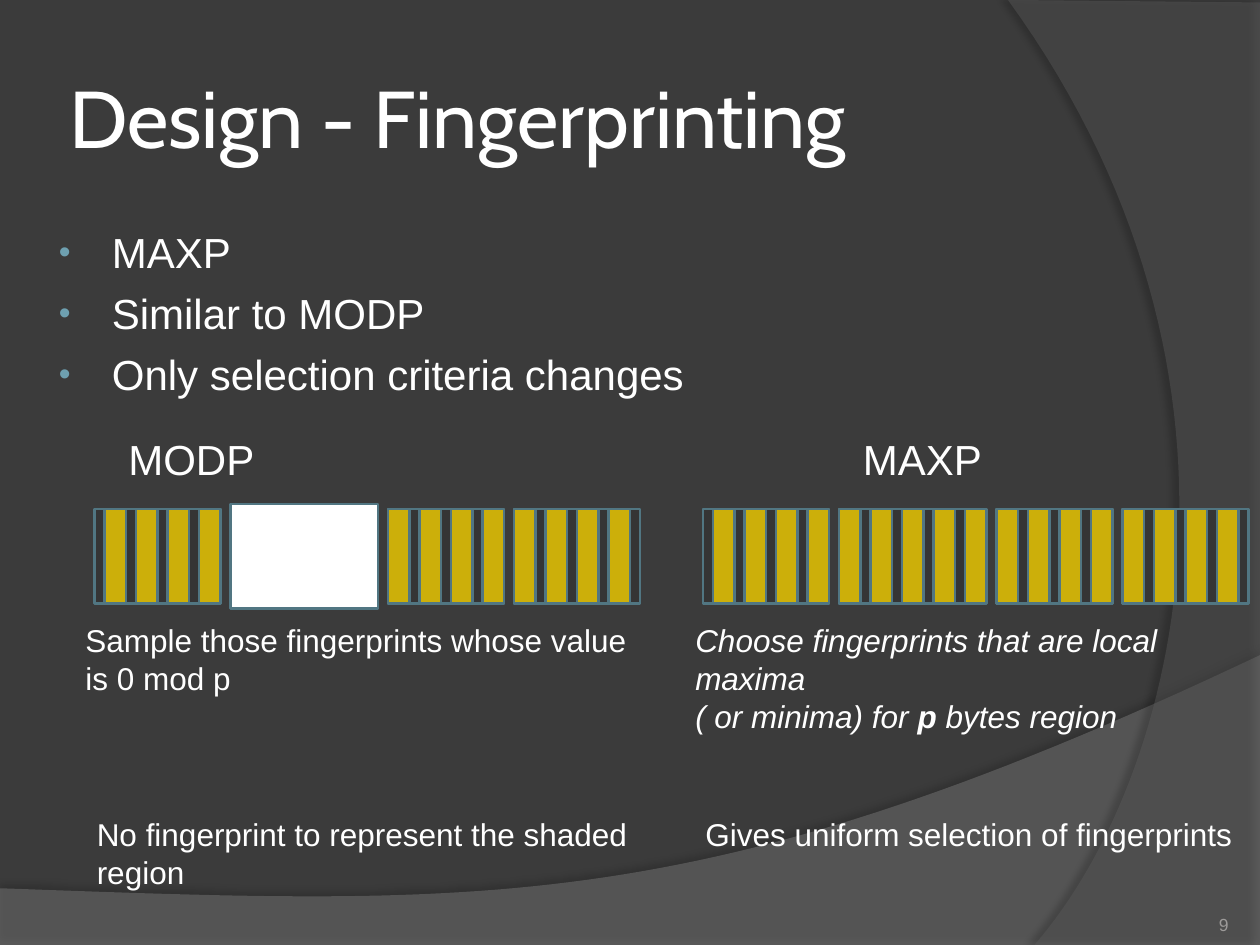
"""Build the fingerprinting design slide comparing MODP and MAXP."""
from lxml.etree import SubElement
from pptx import Presentation
from pptx.dml.color import RGBColor
from pptx.enum.shapes import MSO_SHAPE
from pptx.enum.text import MSO_ANCHOR, PP_ALIGN
from pptx.oxml import parse_xml
from pptx.oxml.ns import nsdecls, qn
from pptx.util import Inches, Pt

COLORS = {"bg": "3B3B3B", "text": "FFFFFF", "bar": "353535", "stripe": "CCAF0A",
          "edge": "517682", "bullet": "6EA0B0", "number": "9D9B9A",
          "wave": "7F7F7F", "arc": "5E5E5E"}
TITLE = "Design - Fingerprinting"
BULLETS = ["MAXP", "Similar to MODP", "Only selection criteria changes"]
LABELS = [("MODP", 0.92, 1.33), ("MAXP", 6.75, 1.42)]
NOTES = [
    (0.58, 4.88, 0.71, [[("Sample those fingerprints whose value is 0 mod p", "")]]),
    (5.42, 4.88, 0.71, [[("Choose fingerprints that are local maxima", "i")],
                        [("( or minima) for ", "i"), ("p", "bi"), (" bytes region", "i")]]),
    (0.67, 6.42, 0.72, [[("No fingerprint to represent the shaded region", "")]]),
    (5.5, 6.42, 0.4, [[("Gives uniform selection of fingerprints", "")]]),
]
STREAMS = [(0.75, {5, 6, 7}), (5.58, set())]
BLOCKS = [(0, 1), (1.08, 1), (2.33, 0.92), (3.33, 1)]
STRIPES, PITCH, STRIPE_W = 17, 0.25, 0.17
BAR_TOP, BAR_H = 4.04, 0.75
WAVES = [
    ("wave", 45, [(0, 7.05), (0, 7.5), (10, 7.5), (10, 5.2)],
     [(5.59, 7.29), (3.91, 7.19), (0, 7.05)], (35, 4, 3.5, 270)),
    ("arc", 40, [(10, 0.02), (10, 7.5), (8.21, 7.5)],
     [(9.35, 6.19), (10.18, 3), (8, 0)], (45, 4, 4, 180)),
]


def rgb(name):
    return RGBColor.from_string(COLORS[name])


def style(r, size, color="text", font="Arial", flags=""):
    r.font.size, r.font.name = Pt(size), font
    r.font.color.rgb = rgb(color)
    r.font.bold, r.font.italic = "b" in flags, "i" in flags


def add_text(s, x, y, w, h, paragraphs, size, color="text"):
    tf = s.shapes.add_textbox(*map(Inches, (x, y, w, h))).text_frame
    tf.word_wrap = True
    for i, runs in enumerate(paragraphs):
        p = tf.paragraphs[0] if i == 0 else tf.add_paragraph()
        for text, flags in runs:
            r = p.add_run()
            r.text = text
            style(r, size, color, flags=flags)
    return tf


def add_rect(s, x, y, w, h, fill):
    sp = s.shapes.add_shape(MSO_SHAPE.RECTANGLE, *map(Inches, (x, y, w, h)))
    sp.shadow.inherit = False
    sp.fill.solid()
    sp.fill.fore_color.rgb = rgb(fill)
    sp.line.color.rgb = rgb("edge")
    sp.line.width = Pt(1.5)


def bezier(p0, p1, p2, p3, steps=60):
    for i in range(1, steps + 1):
        t = i / steps
        yield tuple((1 - t) ** 3 * a + 3 * t * (1 - t) ** 2 * b
                    + 3 * t * t * (1 - t) * c + t ** 3 * d
                    for a, b, c, d in zip(p0, p1, p2, p3))


def add_wave(s, color, alpha, corners, curve, shadow):
    points = [(Inches(x), Inches(y))
              for x, y in corners + list(bezier(corners[-1], *curve))]
    fb = s.shapes.build_freeform(*points[0])
    fb.add_line_segments(points[1:], close=True)
    sp = fb.convert_to_shape()
    sp.fill.solid()
    sp.fill.fore_color.rgb = rgb(color)
    sp.line.fill.background()
    clr = sp.fill._xPr.find(qn("a:solidFill"))[0]
    SubElement(clr, qn("a:alpha"), val=str(alpha * 1000))
    opacity, blur, dist, angle = shadow
    sp._element.spPr.append(parse_xml(
        f'<a:effectLst {nsdecls("a")}><a:outerShdw blurRad="{Pt(blur)}" dist="{Pt(dist)}" '
        f'dir="{angle * 60000}" algn="ctr" rotWithShape="0"><a:srgbClr val="000000">'
        f'<a:alpha val="{opacity * 1000}"/></a:srgbClr></a:outerShdw></a:effectLst>'))


def add_bullet(p):
    pPr = p._p.get_or_add_pPr()
    pPr.set("marL", str(Inches(0.46)))
    pPr.set("indent", str(Inches(-0.42)))
    p.space_before = Pt(6)
    clr = SubElement(pPr, qn("a:buClr"))
    SubElement(clr, qn("a:srgbClr"), val=COLORS["bullet"])
    SubElement(pPr, qn("a:buSzPct"), val="80000")
    SubElement(pPr, qn("a:buFont"), typeface="Arial")
    SubElement(pPr, qn("a:buChar"), char="•")


def add_title(s):
    sp = s.shapes.title
    s.shapes._spTree.append(sp._element)
    sp.left, sp.top, sp.width, sp.height = map(Inches, (0.5, 0.3, 8.17, 1.25))
    tf = sp.text_frame
    tf.text = TITLE
    tf.vertical_anchor = MSO_ANCHOR.MIDDLE
    tf.margin_left = tf.margin_right = tf.margin_top = tf.margin_bottom = Inches(0.05)
    tf.paragraphs[0].alignment = PP_ALIGN.LEFT
    style(tf.paragraphs[0].runs[0], 46, font="Cabin")


def main():
    prs = Presentation()
    prs.slide_width, prs.slide_height = Inches(10), Inches(7.5)
    s = prs.slides.add_slide(prs.slide_layouts[5])
    s.background.fill.solid()
    s.background.fill.fore_color.rgb = rgb("bg")
    for wave in WAVES:
        add_wave(s, *wave)
    add_title(s)

    tf = add_text(s, 0.33, 1.75, 9.17, 1.42, [[(b, "")] for b in BULLETS], 24)
    for p in tf.paragraphs:
        add_bullet(p)
    for text, x, w in LABELS:
        tf = add_text(s, x, 3.08, w, 0.81, [[(text, "")]], 24)
        tf.vertical_anchor = MSO_ANCHOR.BOTTOM

    for left, skipped in STREAMS:
        for dx, w in BLOCKS:
            add_rect(s, left + dx, BAR_TOP, w, BAR_H, "bar")
        for i in range(STRIPES):
            if i not in skipped:
                add_rect(s, left + 0.08 + i * PITCH, BAR_TOP, STRIPE_W, BAR_H, "stripe")
    add_rect(s, 1.83, 4, 1.17, 0.83, "text")

    for x, y, h, paragraphs in NOTES:
        add_text(s, x, y, 4.5, h, paragraphs, 18)
    tf = add_text(s, 8.92, 7.02, 0.83, 0.4, [[("9", "")]], 10, "number")
    tf.margin_left = tf.margin_right = tf.margin_top = tf.margin_bottom = 0
    tf.vertical_anchor = MSO_ANCHOR.BOTTOM
    tf.paragraphs[0].alignment = PP_ALIGN.RIGHT
    prs.save("out.pptx")


if __name__ == "__main__":
    main()
